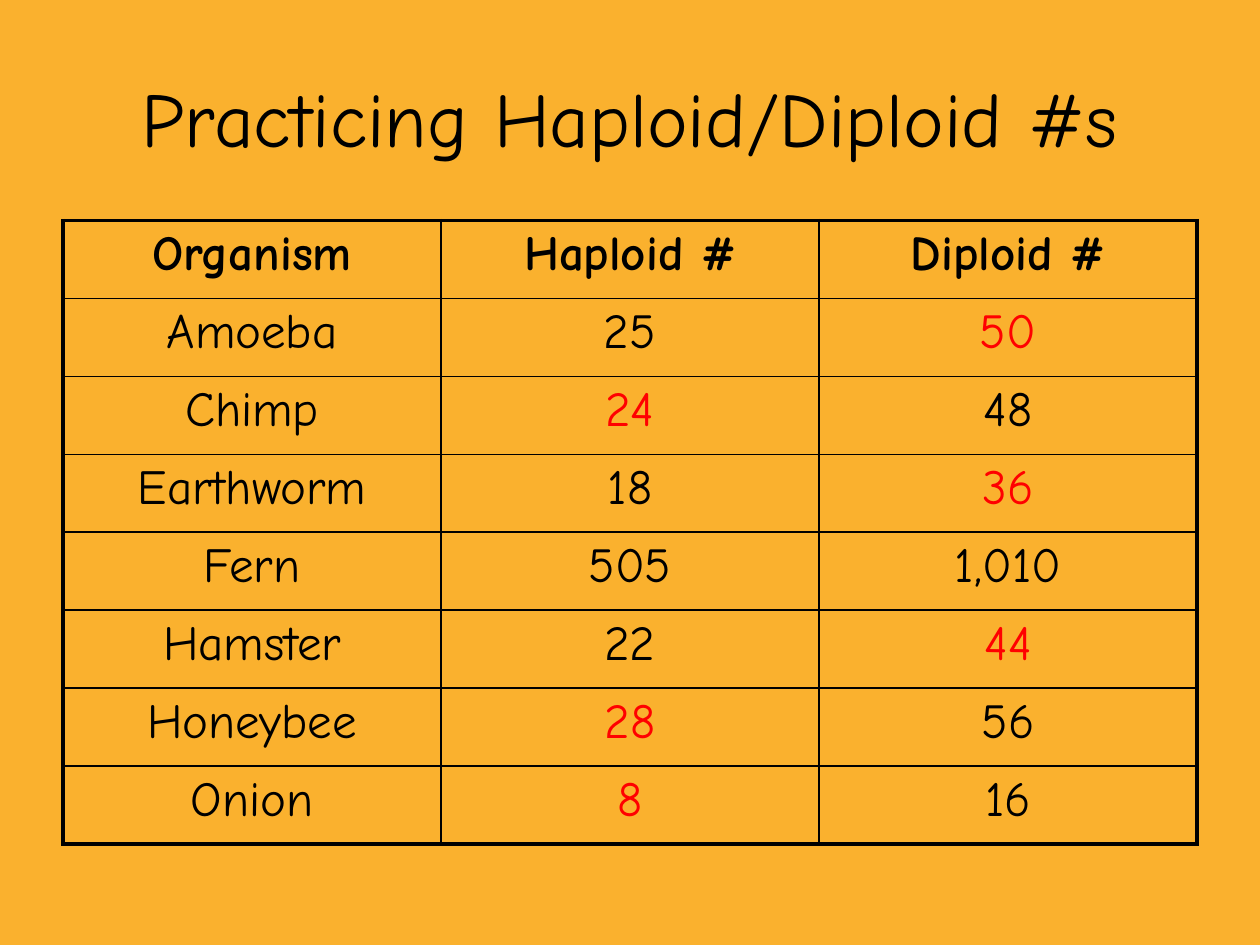
from lxml.etree import SubElement
from pptx import Presentation
from pptx.dml.color import RGBColor
from pptx.enum.text import MSO_ANCHOR, PP_ALIGN
from pptx.oxml.ns import qn
from pptx.util import Inches, Pt

FONT, INK, ANSWER, PAPER = "Comic Neue", "000000", "FF0000", "FAB12E"


def rgb(value):
    return RGBColor.from_string(value)


def add_run(p, text, size, color=INK, bold=False):
    p.alignment = PP_ALIGN.CENTER
    r = p.add_run()
    r.text = text
    r.font.name, r.font.size, r.font.bold = FONT, Pt(size), bold
    r.font.color.rgb = rgb(color)


prs = Presentation()
prs.slide_width, prs.slide_height = Inches(10), Inches(7.5)
W, H = prs.slide_width, prs.slide_height
s = prs.slides.add_slide(prs.slide_layouts[5])
s.background.fill.solid()
s.background.fill.fore_color.rgb = rgb(PAPER)

title = s.shapes.title
title.left, title.top = int(W * 0.05), int(H * 0.04)
title.width, title.height = int(W * 0.9), Inches(1.25)
tf = title.text_frame
tf.vertical_anchor = MSO_ANCHOR.MIDDLE
add_run(tf.paragraphs[0], "Practicing Haploid/Diploid #s", 44)

# Each row ends with the column of its answer, if it has one
rows = [
    ("Organism", "Haploid #", "Diploid #", None),
    ("Amoeba", "25", "50", 2),
    ("Chimp", "24", "48", 1),
    ("Earthworm", "18", "36", 2),
    ("Fern", "505", "1,010", None),
    ("Hamster", "22", "44", 2),
    ("Honeybee", "28", "56", 1),
    ("Onion", "8", "16", 1),
]
n_rows, n_cols = len(rows), 3
table = s.shapes.add_table(n_rows, n_cols, int(W * 0.05), Inches(1.75),
                           int(W * 0.9), Inches(4.95)).table
table.first_row = table.horz_banding = False

for i, (*texts, answer) in enumerate(rows):
    for j, text in enumerate(texts):
        cell = table.cell(i, j)
        p = cell.text_frame.paragraphs[0]
        add_run(p, text, 28, ANSWER if j == answer else INK, bold=i == 0)
        space = SubElement(p._p.get_or_add_pPr(), qn("a:spcBef"))
        SubElement(space, qn("a:spcPct"), val="20000")

        # Thick frame round the table, thin lines inside
        outer = {"L": j == 0, "R": j == n_cols - 1,
                 "T": i == 0, "B": i == n_rows - 1}
        tcPr = cell._tc.get_or_add_tcPr()
        for side, is_outer in outer.items():
            width = Pt(2.25 if is_outer else 1)
            ln = SubElement(tcPr, qn(f"a:ln{side}"), w=str(width))
            fill = SubElement(ln, qn("a:solidFill"))
            SubElement(fill, qn("a:srgbClr"), val=INK)
        cell.fill.background()

prs.save("out.pptx")
